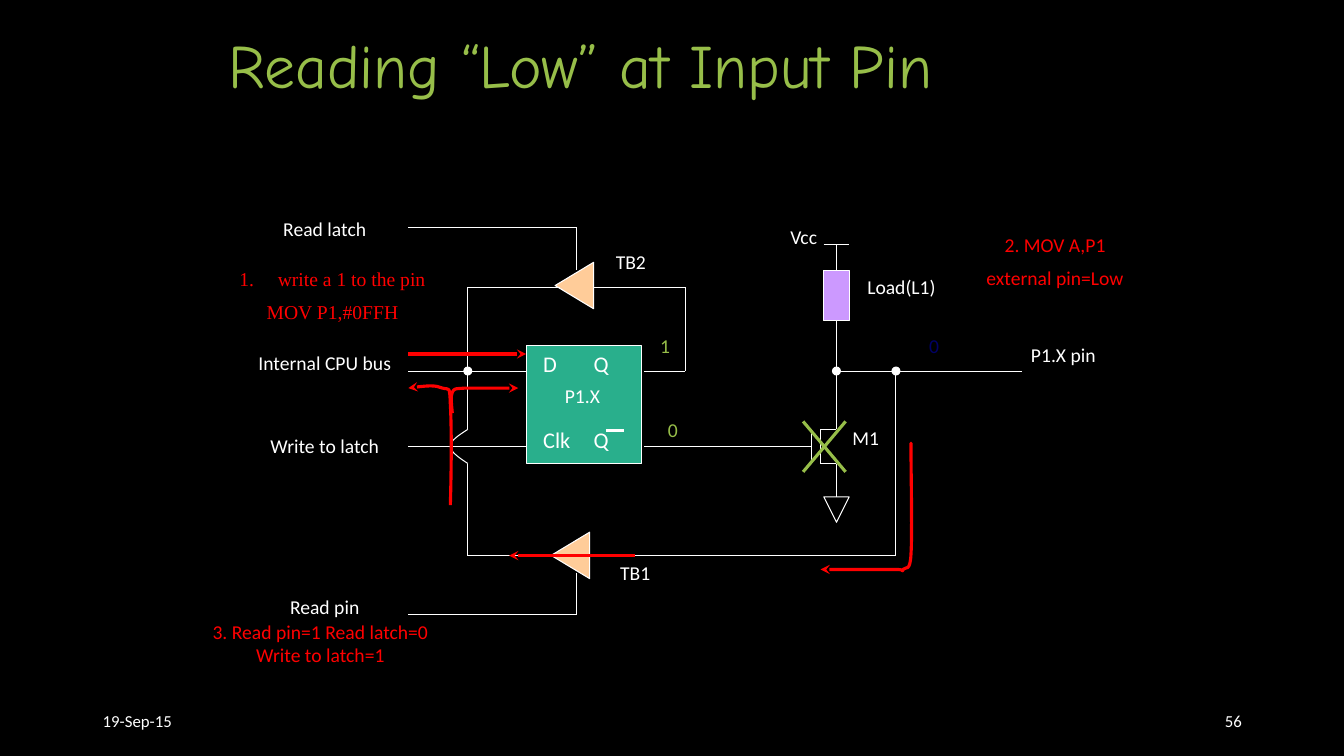
from lxml import etree
from pptx import Presentation
from pptx.dml.color import RGBColor
from pptx.enum.shapes import MSO_CONNECTOR, MSO_SHAPE
from pptx.enum.text import MSO_ANCHOR, PP_ALIGN
from pptx.oxml.ns import qn
from pptx.util import Cm, Pt

BLACK = RGBColor(0x00, 0x00, 0x00)
WHITE = RGBColor(0xFF, 0xFF, 0xFF)
RED = RGBColor(0xFF, 0x00, 0x00)
GREEN = RGBColor(0x97, 0xBE, 0x49)
TEAL = RGBColor(0x29, 0xAF, 0x8C)
PEACH = RGBColor(0xFF, 0xCC, 0x99)
LILAC = RGBColor(0xCC, 0x99, 0xFF)
NAVY = RGBColor(0x00, 0x00, 0x66)

LEFT, CENTER, RIGHT = PP_ALIGN.LEFT, PP_ALIGN.CENTER, PP_ALIGN.RIGHT
TOP, MIDDLE = MSO_ANCHOR.TOP, MSO_ANCHOR.MIDDLE
STRAIGHT = MSO_CONNECTOR.STRAIGHT
RECT, OVAL, WEDGE = MSO_SHAPE.RECTANGLE, MSO_SHAPE.OVAL, MSO_SHAPE.ISOSCELES_TRIANGLE

THIN, THICK = 0.75, 2.25
ROW = 0.84

BUS, NODE, GATE, LATCH = 10.29, 11.79, 14.53, 13.28
OUT, LOOP, BASE, BODY, DRAIN, TAP, PIN = 16.23, 17.27, 20.45, 20.68, 21.08, 22.58, 25.76
READ, VCC, BACK, DATA, CLOCK, SENSE, FETCH = 5.74, 6.17, 7.24, 9.35, 11.25, 14.0, 15.49
UPPER, LOWER = 10.82, 11.68
LOAD_TOP, LOAD_END, GROUND = 6.81, 8.08, 12.52

WIRES = [
    (BUS, DATA, LATCH, DATA), (BUS, CLOCK, LATCH, CLOCK),
    (BUS, READ, GATE, READ), (GATE, READ, GATE, 6.81),
    (BUS, FETCH, GATE, FETCH), (GATE, 14.43, GATE, FETCH),
    (14.96, BACK, LOOP, BACK), (LOOP, BACK, LOOP, DATA), (OUT, DATA, LOOP, DATA),
    (NODE, BACK, 14.1, BACK), (NODE, BACK, NODE, UPPER),
    (NODE, LOWER, NODE, SENSE), (NODE, SENSE, 13.89, SENSE),
    (14.96, SENSE, TAP, SENSE), (TAP, DATA, TAP, SENSE),
    (OUT, CLOCK, BASE, CLOCK), (BASE, UPPER, BASE, LOWER), (BODY, UPPER, BODY, LOWER),
    (BODY, UPPER, DRAIN, UPPER), (BODY, LOWER, DRAIN, LOWER),
    (DRAIN, DATA, PIN, DATA), (DRAIN, LOWER, DRAIN, GROUND),
    (DRAIN - 0.32, VCC, DRAIN + 0.32, VCC),
]

LABELS = [
    ("Read latch", 6.07, 5.33, 4.23, WHITE),
    ("Internal CPU bus", 6.07, 8.71, 4.23, WHITE),
    ("Write to latch", 6.07, 10.82, 4.23, WHITE),
    ("Read pin", 6.07, 14.86, 4.23, WHITE),
    ("Vcc", 19.41, 5.54, 1.69, WHITE),
    ("Load(L1)", 21.13, 6.81, 3.18, WHITE),
    ("M1", 21.08, 10.62, 1.48, WHITE),
    ("P1.X pin", 25.53, 8.51, 2.54, WHITE),
    ("P1.X", 13.41, 9.55, 2.54, WHITE),
    ("TB1", 14.53, 14.0, 2.96, WHITE),
    ("TB2", 14.73, 6.17, 2.34, WHITE),
    ("1", 16.23, 8.28, 1.06, GREEN),
    ("0", 16.43, 10.41, 1.06, GREEN),
    ("0", 23.01, 8.28, 1.06, NAVY),
    ("2. MOV A,P1\nexternal pin=Low", 24.05, 5.74, 5.08, RED),
    ("3. Read pin=1 Read latch=0 Write to latch=1", 5.0, 15.49, 6.15, RED),
]

BRIDGE = [(11.79, 10.82), (11.56, 10.97), (11.35, 11.1), (11.35, 11.25),
          (11.35, 11.38), (11.56, 11.53), (11.79, 11.68)]
FLOWS = [
    [(22.96, 11.28), (22.96, 11.15), (22.96, 11.05), (22.96, 11.48),
     (22.96, 11.94), (22.99, 13.46), (22.96, 13.94),
     (22.94, 14.43), (22.83, 14.27), (22.76, 14.35),
     (22.68, 14.43), (22.89, 14.35), (22.56, 14.35),
     (22.2, 14.35), (21.44, 14.35), (20.68, 14.35)],
    [(11.35, 12.73), (11.38, 11.71), (11.38, 10.69), (11.35, 10.19),
     (11.33, 9.7), (11.33, 9.83), (11.15, 9.78),
     (10.97, 9.7), (10.64, 9.73), (10.29, 9.78)],
    [(11.4, 10.41), (11.38, 10.19), (11.35, 9.98), (11.4, 9.88),
     (11.46, 9.78), (11.46, 9.8), (11.73, 9.78),
     (12.01, 9.78), (12.52, 9.78), (13.06, 9.78)],
]


def stroke(shape, color, width, arrow=False):
    shape.line.color.rgb = color
    shape.line.width = Pt(width)
    if arrow:
        edge = shape.line._get_or_add_ln()
        etree.SubElement(edge, qn("a:tailEnd"), type="stealth")


def wire(slide, x1, y1, x2, y2, color=WHITE, width=THIN, arrow=False):
    line = slide.shapes.add_connector(STRAIGHT, Cm(x1), Cm(y1), Cm(x2), Cm(y2))
    stroke(line, color, width, arrow)
    etree.SubElement(line._element.spPr, qn("a:effectLst"))
    return line


def block(slide, kind, x, y, w, h, fill=None, turn=0):
    shape = slide.shapes.add_shape(kind, Cm(x), Cm(y), Cm(w), Cm(h))
    shape.rotation = turn
    shape.shadow.inherit = False
    stroke(shape, WHITE, THIN)
    if fill is None:
        shape.fill.background()
    else:
        shape.fill.solid()
        shape.fill.fore_color.rgb = fill
    return shape


def curve(slide, points, color, width, arrow=False):
    spots = [(Cm(x), Cm(y)) for x, y in points]
    pen = slide.shapes.build_freeform(*spots[0])
    pen.add_line_segments(spots[1:], close=False)
    shape = pen.convert_to_shape()
    shape.shadow.inherit = False
    shape.fill.background()
    stroke(shape, color, width, arrow)
    route = next(shape._element.iter(qn("a:path")))
    steps = route.findall(qn("a:lnTo"))
    for i in range(0, len(steps), 3):
        bend = etree.SubElement(route, qn("a:cubicBezTo"))
        for step in steps[i:i + 3]:
            bend.append(step[0])
            route.remove(step)


def label(slide, text, x, y, w, color=WHITE, h=ROW, size=14, font="Calibri",
          align=CENTER, anchor=TOP, gap=7):
    box = slide.shapes.add_textbox(Cm(x), Cm(y), Cm(w), Cm(h))
    frame = box.text_frame
    frame.word_wrap = True
    frame.vertical_anchor = anchor
    frame.text = text
    for i, para in enumerate(frame.paragraphs):
        para.alignment = align
        para.space_before = Pt(gap if i else 0)
        para.font.size = Pt(size)
        para.font.name = font
        para.font.color.rgb = color
    return frame


def latch(slide):
    block(slide, RECT, LATCH, 8.71, 2.9, 2.97, TEAL)
    frame = label(slide, "D\tQ\nClk\tQ", 13.44, 8.71, 2.59, h=2.97, size=16,
                  align=LEFT, gap=34.5)
    for para in frame.paragraphs:
        tabs = etree.Element(qn("a:tabLst"))
        etree.SubElement(tabs, qn("a:tab"), pos=str(Cm(1.27)), algn="l")
        props = para._p.get_or_add_pPr()
        props.find(qn("a:defRPr")).addprevious(tabs)
    wire(slide, 15.27, 10.85, 15.72, 10.85, width=2)


def load(slide):
    part = block(slide, RECT, DRAIN - 0.32, LOAD_TOP, 0.64, LOAD_END - LOAD_TOP, LILAC)
    feed = wire(slide, DRAIN, VCC, DRAIN, LOAD_TOP)
    feed.end_connect(part, 0)
    drop = wire(slide, DRAIN, LOAD_END, DRAIN, UPPER)
    drop.begin_connect(part, 2)


def steps(slide):
    frame = label(slide, "write a 1 to the pin\nMOV P1,#0FFH", 4.57, 6.6, 7.62,
                  RED, h=1.75, font="Times New Roman")
    for para in frame.paragraphs:
        props = para._p.get_or_add_pPr()
        props.set("marL", str(Cm(0.97)))
        props.set("indent", str(Cm(-0.97)))
    count = etree.Element(qn("a:buAutoNum"), type="arabicPeriod")
    first = frame.paragraphs[0]._p.pPr
    first.find(qn("a:defRPr")).addprevious(count)


def main():
    deck = Presentation()
    deck.slide_width, deck.slide_height = Cm(33.87), Cm(19.05)
    slide = deck.slides.add_slide(deck.slide_layouts[6])
    slide.background.fill.solid()
    slide.background.fill.fore_color.rgb = BLACK

    title = label(slide, "Reading “Low” at Input Pin", 5.51, 0.76, 22.86, GREEN,
                  h=3.18, size=44, font="Comic Neue", align=LEFT)
    title.paragraphs[0].line_spacing = 0.9
    for text, x, align in (("19-Sep-15", 2.34, LEFT), ("56", 23.93, RIGHT)):
        label(slide, text, x, 17.65, 7.62, h=1.02, size=12, align=align, anchor=MIDDLE)

    latch(slide)
    for x, y in ((13.89, 6.71), (13.79, 13.51)):
        block(slide, WEDGE, x, y, 1.17, 0.97, PEACH, 270)
    block(slide, WEDGE, DRAIN - 0.32, GROUND, 0.64, 0.64, turn=180)
    load(slide)
    for ends in WIRES:
        wire(slide, *ends)
    for x in (NODE, DRAIN, TAP):
        block(slide, OVAL, x - 0.1, DATA - 0.1, 0.2, 0.2, WHITE)
    curve(slide, BRIDGE, WHITE, THIN)

    for item in LABELS:
        label(slide, *item)
    steps(slide)

    for flow in FLOWS:
        curve(slide, flow, RED, THICK, True)
    wire(slide, 16.0, SENSE, 12.83, SENSE, RED, THICK, True)
    wire(slide, BUS, 8.92, 13.26, 8.92, RED, THICK, True)
    for x1, x2 in ((20.24, 21.31), (21.31, 20.24)):
        wire(slide, x1, 10.62, x2, 11.89, GREEN, THICK)

    deck.save("out.pptx")


if __name__ == "__main__":
    main()
